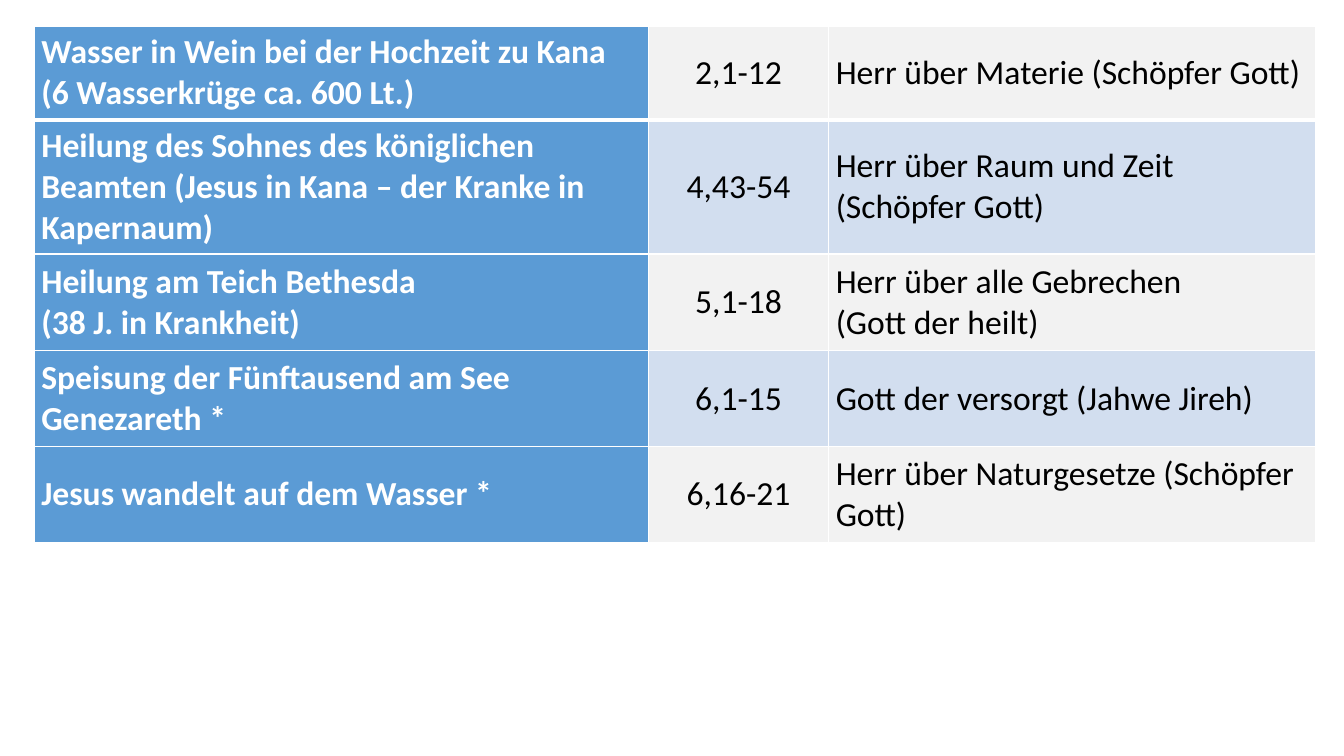
from dataclasses import dataclass

from lxml.etree import SubElement
from pptx import Presentation
from pptx.dml.color import RGBColor
from pptx.enum.text import MSO_ANCHOR, PP_ALIGN
from pptx.oxml.ns import qn
from pptx.table import _Cell
from pptx.util import Inches, Pt


@dataclass(frozen=True)
class Theme:
    font: str = "Calibri"
    size: int = 24
    heading_fill: str = "5B9BD5"
    band_fills: tuple[str, str] = ("F2F2F2", "D2DEEF")
    heading_text: str = "FFFFFF"
    body_text: str = "000000"
    border: str = "FFFFFF"
    thin: int = 1
    thick: int = 3


@dataclass(frozen=True)
class Miracle:
    event: str
    verses: str
    meaning: str
    height: float


THEME = Theme()
COLUMN_WIDTHS = (6.09, 1.79, 4.83)
MIRACLES = (
    Miracle("Wasser in Wein bei der Hochzeit zu Kana\n(6 Wasserkrüge ca. 600 Lt.)",
            "2,1-12", "Herr über Materie (Schöpfer Gott)", 0.93),
    Miracle("Heilung des Sohnes des königlichen Beamten "
            "(Jesus in Kana – der Kranke in Kapernaum)",
            "4,43-54", "Herr über Raum und Zeit (Schöpfer Gott)", 1.33),
    Miracle("Heilung am Teich Bethesda\n(38 J. in Krankheit)",
            "5,1-18", "Herr über alle Gebrechen\n(Gott der heilt)", 0.96),
    Miracle("Speisung der Fünftausend am See Genezareth *",
            "6,1-15", "Gott der versorgt (Jahwe Jireh)", 0.95),
    Miracle("Jesus wandelt auf dem Wasser *",
            "6,16-21", "Herr über Naturgesetze (Schöpfer Gott)", 0.95),
)


def set_borders(cell: _Cell, row: int) -> None:
    properties = cell._tc.get_or_add_tcPr()
    widths = {
        "a:lnL": THEME.thin,
        "a:lnR": THEME.thin,
        "a:lnT": THEME.thick if row == 1 else THEME.thin,
        "a:lnB": THEME.thick if row == 0 else THEME.thin,
    }
    for side, width in widths.items():
        line = SubElement(properties, qn(side), w=str(Pt(width)))
        fill = SubElement(line, qn("a:solidFill"))
        SubElement(fill, qn("a:srgbClr"), val=THEME.border)


def fill_cell(cell: _Cell, text: str, row: int, column: int) -> None:
    is_heading = column == 0
    set_borders(cell, row)
    cell.fill.solid()
    cell.fill.fore_color.rgb = RGBColor.from_string(
        THEME.heading_fill if is_heading else THEME.band_fills[row % 2])
    cell.vertical_anchor = MSO_ANCHOR.MIDDLE
    cell.margin_left = cell.margin_right = Inches(0.07)
    cell.margin_top = cell.margin_bottom = Inches(0)
    cell.text_frame.text = text
    for para in cell.text_frame.paragraphs:
        para.alignment = PP_ALIGN.CENTER if column == 1 else PP_ALIGN.LEFT
        for span in para.runs:
            span.font.name = THEME.font
            span.font.size = Pt(THEME.size)
            span.font.bold = is_heading
            span.font.color.rgb = RGBColor.from_string(
                THEME.heading_text if is_heading else THEME.body_text)


def main() -> None:
    deck = Presentation()
    deck.slide_width, deck.slide_height = Inches(13.33), Inches(7.5)
    page = deck.slides.add_slide(deck.slide_layouts[6])
    table = page.shapes.add_table(
        len(MIRACLES), len(COLUMN_WIDTHS), Inches(0.34), Inches(0.26),
        Inches(sum(COLUMN_WIDTHS)),
        Inches(sum(miracle.height for miracle in MIRACLES))).table
    table.first_row = False
    table.first_col = True
    for column, width in enumerate(COLUMN_WIDTHS):
        table.columns[column].width = Inches(width)
    for row, miracle in enumerate(MIRACLES):
        table.rows[row].height = Inches(miracle.height)
        texts = (miracle.event, miracle.verses, miracle.meaning)
        for column, text in enumerate(texts):
            fill_cell(table.cell(row, column), text, row, column)
    deck.save("out.pptx")


if __name__ == "__main__":
    main()
